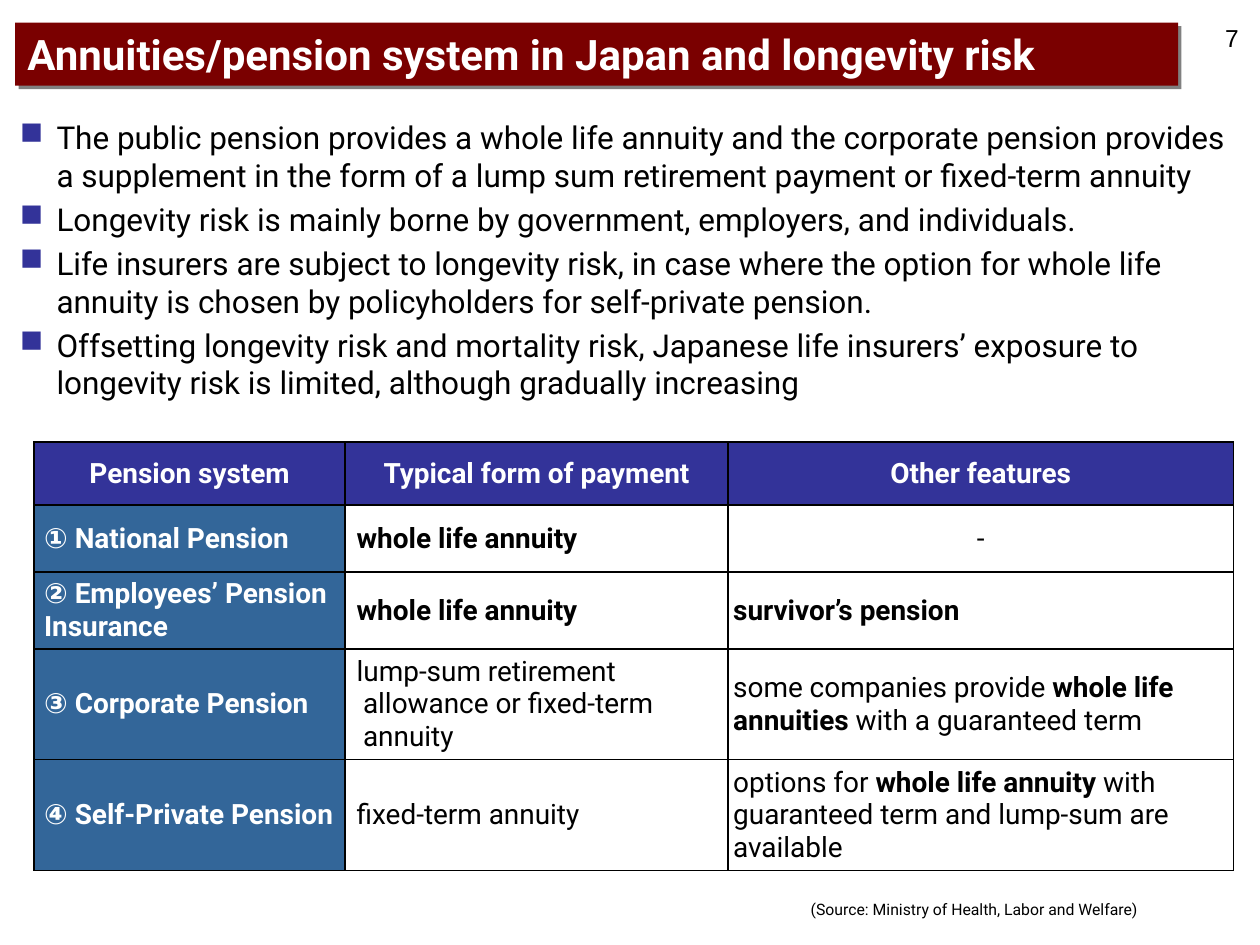
"""Build the slide on the Japanese pension system and longevity risk."""
import dataclasses
import typing

import lxml.etree
import pptx
import pptx.dml.color
import pptx.enum.shapes
import pptx.enum.text
import pptx.oxml.ns
import pptx.util

Pt = pptx.util.Pt
ALIGN = pptx.enum.text.PP_ALIGN
ANCHOR = pptx.enum.text.MSO_ANCHOR


@dataclasses.dataclass(frozen=True)
class Theme:
    """Colours, fonts and type sizes of the slide."""

    font: str = "Roboto"
    number_font: str = "Arial"
    dark: str = "000000"
    light: str = "FFFFFF"
    banner: str = "7A0000"
    shadow: str = "808080"
    header: str = "333399"
    system: str = "336699"
    title_size: float = 24
    body_size: float = 18
    table_size: float = 16
    number_size: float = 14
    source_size: float = 9


THEME = Theme()


class Box(typing.NamedTuple):
    """Position and size in points."""

    left: float
    top: float
    width: float
    height: float

    def lengths(self) -> list:
        """Return the four values as lengths."""
        return [Pt(value) for value in self]


@dataclasses.dataclass(frozen=True)
class CellStyle:
    """Look of one kind of table cell."""

    fill: str
    color: str
    margins: tuple
    align: typing.Any = ALIGN.LEFT
    hanging: float = 0


@dataclasses.dataclass(frozen=True)
class Pension:
    """One table row; asterisks enclose bold words."""

    system: str
    payment: str
    features: str
    height: float


HEADER = CellStyle(THEME.header, THEME.light, (0, 0, 0, 0), ALIGN.CENTER)
SYSTEM = CellStyle(THEME.system, THEME.light, (5.76, 2.88, 5.76, 2.88))
PAYMENT = CellStyle(THEME.light, THEME.dark, (6.6, 2.88, 2.88, 2.88), hanging=3.6)
FEATURES = CellStyle(THEME.light, THEME.dark, (2.88, 2.88, 2.88, 2.88))
CENTERED = dataclasses.replace(FEATURES, align=ALIGN.CENTER)

TABLE_BOX = Box(19.44, 252.72, 685.44, 244.8)
COLUMN_WIDTHS = (177.84, 218.88, 288.72)
HEADER_HEIGHT = 36
HEADINGS = ("*Pension system*", "*Typical form of payment*", "*Other features*")
PENSIONS = (
    Pension("*① National Pension*", "*whole life annuity*", "-", 38.16),
    Pension("*② Employees’ Pension Insurance*", "*whole life annuity*",
            "*survivor’s pension*", 43.92),
    Pension("*③ Corporate Pension*",
            "lump-sum retirement allowance or fixed-term annuity",
            "some companies provide *whole life annuities* with a guaranteed term", 63.36),
    Pension("*④ Self-Private Pension*", "fixed-term annuity",
            "options for *whole life annuity* with guaranteed term and lump-sum are available",
            63.36),
)
BULLETS = (
    "The public pension provides a whole life annuity and the corporate pension provides "
    "a supplement in the form of a lump sum retirement payment or fixed-term annuity",
    "Longevity risk is mainly borne by government, employers, and individuals.",
    "Life insurers are subject to longevity risk, in case where the option for whole life "
    "annuity is chosen by policyholders for self-private pension.",
    "Offsetting longevity risk and mortality risk, Japanese life insurers’ exposure to "
    "longevity risk is limited, although gradually increasing",
)


def rgb(color: str) -> pptx.dml.color.RGBColor:
    """Turn a hex string into a colour."""
    return pptx.dml.color.RGBColor.from_string(color)


def add_element(parent, tag: str, **attributes):
    """Append a DrawingML child element."""
    return lxml.etree.SubElement(parent, pptx.oxml.ns.qn(tag), attributes)


def write_text(frame, *texts: str, size: float, color: str = THEME.dark,
               font: str = THEME.font, align=ALIGN.LEFT, anchor=ANCHOR.TOP,
               margins=(7.2, 3.6, 7.2, 3.6), space_before: float = 0,
               hanging: float = 0, bullet: str = "") -> None:
    """Write one paragraph per text, with bold words between asterisks."""
    frame.word_wrap = True
    frame.vertical_anchor = anchor
    frame.margin_left, frame.margin_top, frame.margin_right, frame.margin_bottom = map(Pt, margins)
    for index, text in enumerate(texts):
        paragraph = frame.add_paragraph() if index else frame.paragraphs[0]
        paragraph.alignment = align
        paragraph.space_before = Pt(space_before)
        properties = paragraph._p.get_or_add_pPr()
        properties.set("marL", str(int(Pt(hanging))))
        properties.set("indent", str(-int(Pt(hanging))))
        if bullet:
            add_element(add_element(properties, "a:buClr"), "a:srgbClr", val=THEME.header)
            add_element(properties, "a:buChar", char=bullet)
        for part, words in enumerate(text.split("*")):
            if words:
                run = paragraph.add_run()
                run.text = words
                run.font.name = font
                run.font.size = Pt(size)
                run.font.bold = part % 2 == 1
                run.font.color.rgb = rgb(color)


def add_text(slide, box: Box, *texts: str, **text_format) -> None:
    """Add a text box."""
    write_text(slide.shapes.add_textbox(*box.lengths()).text_frame, *texts, **text_format)


def add_banner(slide, box: Box, title: str) -> None:
    """Add the title bar with its hard shadow."""
    shape = slide.shapes.add_shape(pptx.enum.shapes.MSO_SHAPE.RECTANGLE, *box.lengths())
    shape.fill.solid()
    shape.fill.fore_color.rgb = rgb(THEME.banner)
    shape.line.fill.background()
    shape.shadow.inherit = False
    effects = shape._element.spPr.find(pptx.oxml.ns.qn("a:effectLst"))
    shadow = add_element(effects, "a:outerShdw", blurRad="0", dist=str(int(Pt(2.8))),
                         dir="2700000", algn="ctr", rotWithShape="0")
    add_element(shadow, "a:srgbClr", val=THEME.shadow)
    write_text(shape.text_frame, title, size=THEME.title_size, color=THEME.light,
               anchor=ANCHOR.MIDDLE)


def fill_cell(cell, text: str, style: CellStyle) -> None:
    """Give a table cell its borders, fill and text."""
    properties = cell._tc.get_or_add_tcPr()
    for side in "LRTB":
        border = add_element(properties, f"a:ln{side}", w=str(int(Pt(1))))
        add_element(add_element(border, "a:solidFill"), "a:srgbClr", val=THEME.dark)
    cell.fill.solid()
    cell.fill.fore_color.rgb = rgb(style.fill)
    write_text(cell.text_frame, text, size=THEME.table_size, color=style.color,
               align=style.align, hanging=style.hanging)
    cell.vertical_anchor = ANCHOR.MIDDLE
    cell.margin_left, cell.margin_top, cell.margin_right, cell.margin_bottom = map(
        Pt, style.margins)


def add_pension_table(slide) -> None:
    """Add the table of pension systems."""
    table = slide.shapes.add_table(
        len(PENSIONS) + 1, len(HEADINGS), *TABLE_BOX.lengths()).table
    table.first_row = table.horz_banding = False
    for column, width in zip(table.columns, COLUMN_WIDTHS):
        column.width = Pt(width)
    table.rows[0].height = Pt(HEADER_HEIGHT)
    for cell, heading in zip(table.rows[0].cells, HEADINGS):
        fill_cell(cell, heading, HEADER)
    for index, pension in enumerate(PENSIONS, start=1):
        row = table.rows[index]
        row.height = Pt(pension.height)
        texts = (pension.system, pension.payment, pension.features)
        styles = (SYSTEM, PAYMENT, CENTERED if pension.features == "-" else FEATURES)
        for cell, text, style in zip(row.cells, texts, styles):
            fill_cell(cell, text, style)


def main() -> None:
    """Build and save the slide."""
    presentation = pptx.Presentation()
    presentation.slide_width, presentation.slide_height = Pt(720), Pt(540)
    slide = presentation.slides.add_slide(presentation.slide_layouts[6])
    add_pension_table(slide)
    add_text(slide, Box(4.32, 48.96, 711.36, 198.72), *BULLETS, size=THEME.body_size,
             anchor=ANCHOR.MIDDLE, margins=(7.2, 0.72, 7.2, 0.72), space_before=3.6,
             hanging=20.88, bullet="■")
    add_text(slide, Box(456.2, 510.5, 249.4, 20),
             "(Source: Ministry of Health, Labor and Welfare)", size=THEME.source_size)
    add_banner(slide, Box(8.64, 12.96, 664.56, 36),
               "*Annuities/pension system in Japan and longevity risk*")
    add_text(slide, Box(547.2, 9.36, 167.76, 37.44), "7", size=THEME.number_size,
             font=THEME.number_font, align=ALIGN.RIGHT)
    presentation.save("out.pptx")


if __name__ == "__main__":
    main()
